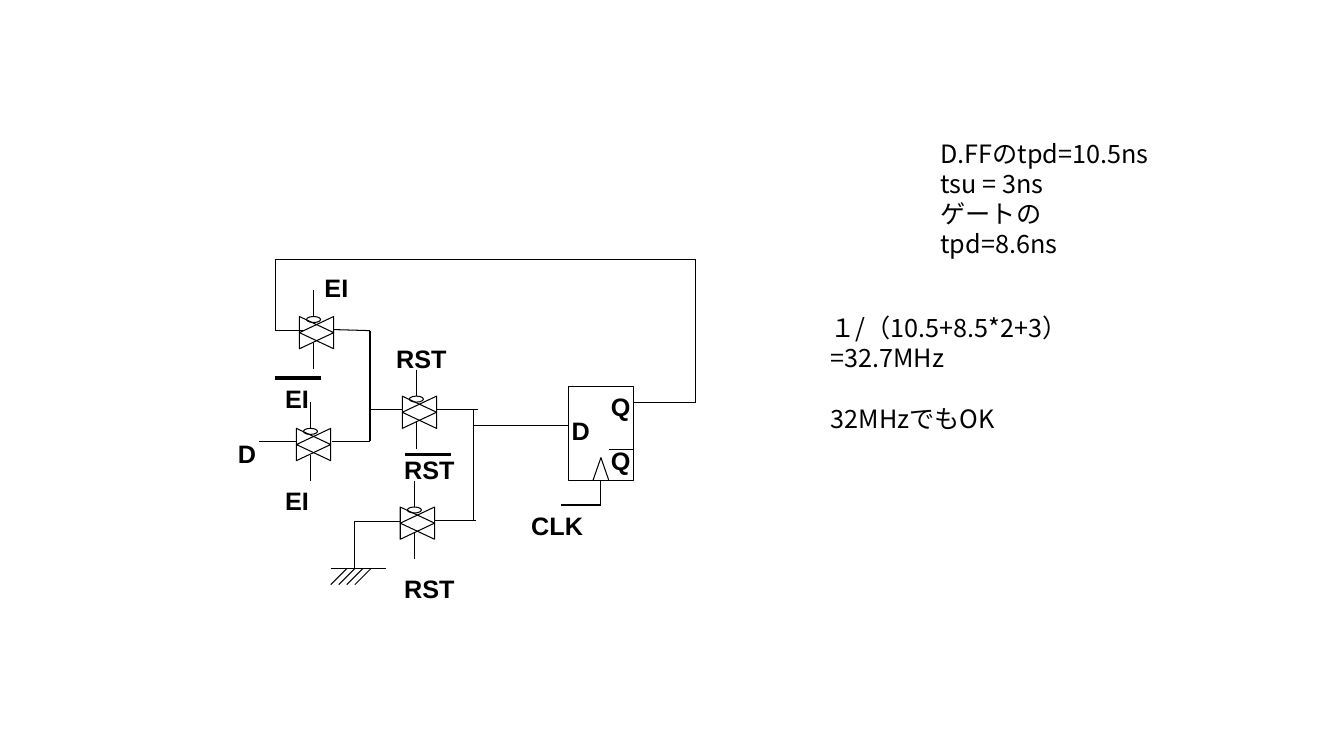
from lxml import etree
from pptx import Presentation
from pptx.dml.color import RGBColor
from pptx.enum.shapes import MSO_CONNECTOR, MSO_SHAPE
from pptx.oxml.ns import qn
from pptx.util import Inches, Pt

STRAIGHT = MSO_CONNECTOR.STRAIGHT
RECTANGLE, TRIANGLE, OVAL = MSO_SHAPE.RECTANGLE, MSO_SHAPE.ISOSCELES_TRIANGLE, MSO_SHAPE.OVAL
BLACK = RGBColor.from_string("000000")

deck = Presentation()
deck.slide_width, deck.slide_height = Inches(13.33), Inches(7.5)
page = deck.slides.add_slide(deck.slide_layouts[6])


def add_line(x1, y1, x2, y2, weight=0.75):
    line = page.shapes.add_connector(STRAIGHT, Inches(x1), Inches(y1), Inches(x2), Inches(y2))
    line.line.color.rgb = BLACK
    line.line.width = Pt(weight)
    etree.SubElement(line._element.spPr, qn("a:effectLst"))
    return line


def add_outline(kind, left, top, width, height, rotation=0):
    shape = page.shapes.add_shape(kind, Inches(left), Inches(top), Inches(width), Inches(height))
    shape.rotation = rotation
    shape.shadow.inherit = False
    shape.fill.background()
    shape.line.color.rgb = BLACK
    shape.line.width = Pt(0.75)
    return shape


flip_flop = add_outline(RECTANGLE, 5.64, 3.83, 0.64, 0.94)
clock_stub = add_line(5.96, 4.77, 5.96, 5.01)
clock_stub.begin_connect(flip_flop, 2)

for x, y in [(2.98, 3.13), (2.95, 4.24), (4, 3.92), (3.98, 5.02)]:
    for rotation in (90, 270):
        add_outline(TRIANGLE, x, y, 0.32, 0.34, rotation)
    add_outline(OVAL, x + 0.06, y + 0.01, 0.14, 0.06)
    for start in (-0.25, 0.27):
        add_line(x + 0.13, y + start, x + 0.13, y + start + 0.26)

wires = [
    (5.88, 4.77, 5.96, 4.54), (5.96, 4.54, 6.04, 4.77), (5.96, 5.01, 5.56, 5.01),
    (6.28, 3.99, 6.9, 3.99), (6.9, 2.57, 6.9, 3.99), (6.9, 2.57, 2.73, 2.57),
    (2.73, 2.57, 2.73, 3.28), (3.02, 3.28, 2.73, 3.28),
    (3.67, 3.28, 3.31, 3.27), (3.67, 3.28, 3.67, 4.38), (3.67, 4.38, 3.29, 4.38),
    (2.94, 4.38, 2.57, 4.38), (3.99, 4.06, 3.67, 4.06), (4.74, 4.06, 4.33, 4.06),
    (4.7, 4.06, 4.7, 5.17), (4.7, 4.22, 5.64, 4.22), (4.72, 5.16, 4.31, 5.16),
    (3.97, 5.17, 3.52, 5.17), (3.52, 5.17, 3.52, 5.64), (3.28, 5.64, 3.83, 5.64),
]
for wire in wires:
    add_line(*wire)

for stripe in range(4):
    x = 3.44 + 0.08 * stripe
    add_line(x, 5.64, x - 0.16, 5.8)

add_line(6.04, 4.46, 6.28, 4.46)
for x, y in [(2.73, 3.75), (4.02, 4.51)]:
    add_line(x, y, x + 0.45, y, 2.25)

labels = [
    ("D", 5.57, 4.07, 0.38), ("Q", 5.96, 3.83, 0.4), ("Q", 5.96, 4.37, 0.4),
    ("CLK", 5.17, 5.01, 0.72), ("D", 2.26, 4.3, 0.38),
    ("EI", 3.12, 2.65, 0.44), ("EI", 2.73, 3.75, 0.44), ("EI", 2.73, 4.77, 0.44),
    ("RST", 3.83, 3.36, 0.72), ("RST", 3.91, 4.46, 0.72), ("RST", 3.91, 5.64, 0.72),
]
texts = [([text], x, y, width, 0.4, "Arial", True) for text, x, y, width in labels]
texts += [
    (["D.FFのtpd=10.5ns", "tsu = 3ns", "ゲートの\vtpd=8.6ns"],
     9.23, 1.32, 2.4, 1.31, "Noto Sans CJK JP", False),
    (["１/（10.5+8.5*2+3）\v=32.7MHz", "32MHzでもOK"],
     8.14, 3.05, 3.88, 1.31, "Noto Sans CJK JP", False),
]
for lines, x, y, width, height, font, bold in texts:
    box = page.shapes.add_textbox(Inches(x), Inches(y), Inches(width), Inches(height))
    frame = box.text_frame
    frame.word_wrap = False
    frame.text = "\n".join(lines)
    for para in frame.paragraphs:
        para.font.name = font
        para.font.size = Pt(18)
        para.font.bold = bold
        para.font.color.rgb = BLACK
        if not bold:
            para.line_spacing = Pt(21.6)
frame.paragraphs[1].space_before = Pt(21.6)

deck.save("out.pptx")
